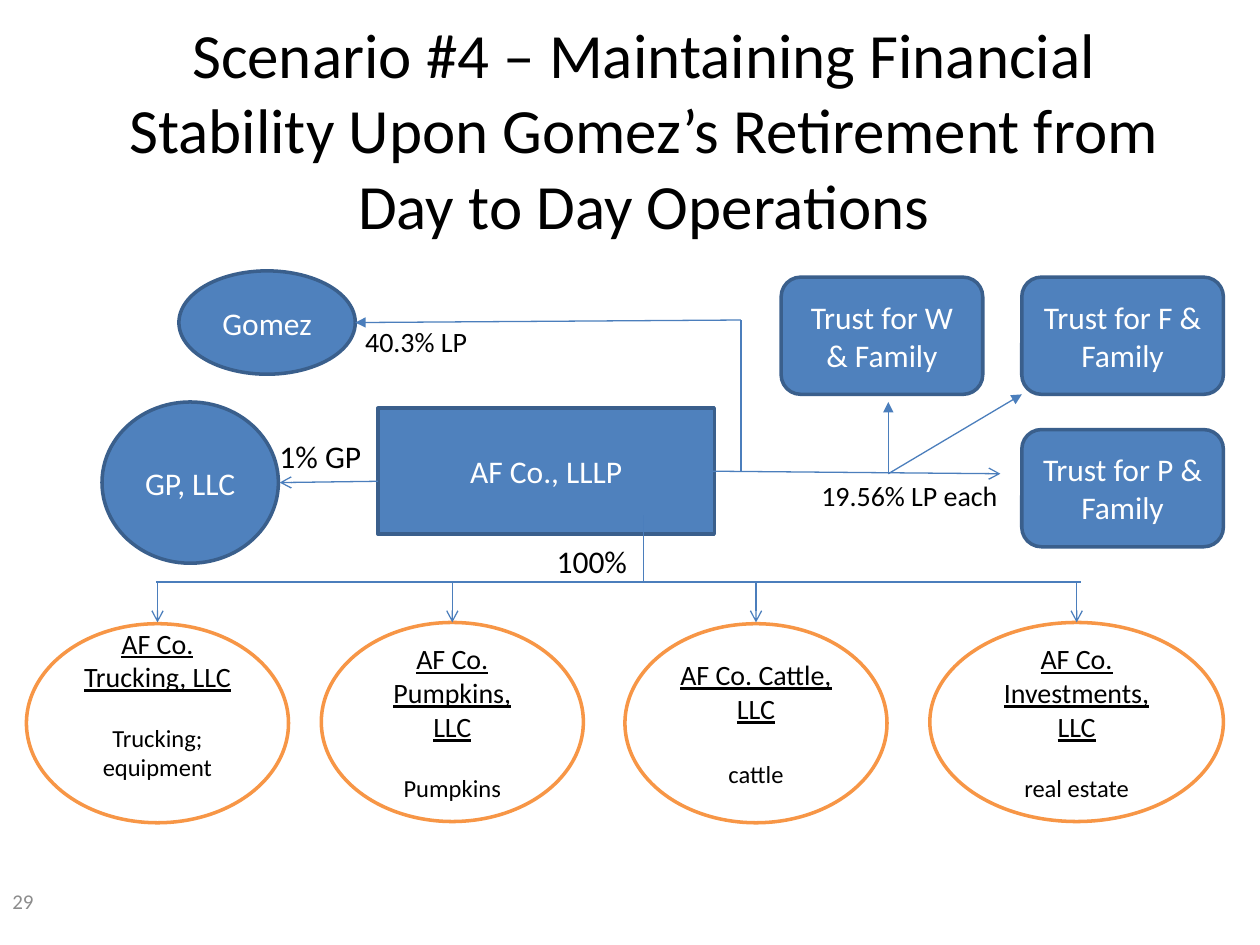
from dataclasses import dataclass

from lxml.etree import SubElement
from pptx import Presentation
from pptx.dml.color import RGBColor
from pptx.enum.shapes import MSO_CONNECTOR, MSO_SHAPE
from pptx.enum.text import MSO_ANCHOR, MSO_AUTO_SIZE, PP_ALIGN
from pptx.oxml.ns import qn
from pptx.util import Inches, Pt


@dataclass(frozen=True)
class Theme:
    """Colours, type sizes and line widths of the slide."""
    font: str = "Calibri"
    ink: str = "000000"
    paper: str = "FFFFFF"
    blue: str = "4F81BD"
    edge: str = "3A5F8C"
    wire: str = "4B7EBC"
    orange: str = "F79646"
    grey: str = "8C8C8C"
    title: int = 36
    body: int = 18
    name: int = 16
    detail: int = 14
    number: int = 12
    outline: float = 2
    thin: float = 0.75


class Diagram:
    """Draws on one slide, with lengths in a grid of 100 columns and 75 rows."""

    def __init__(self, deck, theme):
        self.theme = theme
        self.slide = deck.slides.add_slide(deck.slide_layouts[5])
        self.column = deck.slide_width / 100
        self.row = deck.slide_height / 75

    def place(self, *lengths):
        """Turn alternating columns and rows into slide lengths."""
        units = (self.column, self.row) * 2
        return [round(length * unit) for length, unit in zip(lengths, units)]

    def add_span(self, para, text, size, color, underline=False, align=PP_ALIGN.CENTER):
        """Add one formatted span to a paragraph."""
        para.alignment = align
        span = para.add_run()
        span.text = text
        span.font.color.rgb = RGBColor.from_string(color)
        formats = {"name": self.theme.font, "size": Pt(size), "underline": underline}
        for key, value in formats.items():
            setattr(span.font, key, value)

    def frame(self, shape, anchor=MSO_ANCHOR.MIDDLE):
        """Set up the text frame of a shape and return it."""
        formats = {"word_wrap": True, "auto_size": MSO_AUTO_SIZE.NONE,
                   "vertical_anchor": anchor}
        for key, value in formats.items():
            setattr(shape.text_frame, key, value)
        return shape.text_frame

    def title(self, text, *area):
        """Move and fill the title placeholder."""
        box = self.slide.shapes.title
        for key, value in zip(("left", "top", "width", "height"), self.place(*area)):
            setattr(box, key, value)
        self.add_span(self.frame(box).paragraphs[0], text, self.theme.title, self.theme.ink)

    def shape(self, preset, area, fill, edge):
        """Add a filled preset shape and return its text frame."""
        box = self.slide.shapes.add_shape(preset, *self.place(*area))
        box.shadow.inherit = False
        box.fill.solid()
        box.fill.fore_color.rgb = RGBColor.from_string(fill)
        box.line.color.rgb = RGBColor.from_string(edge)
        box.line.width = Pt(self.theme.outline)
        return self.frame(box)

    def party(self, preset, text, *area):
        """Add a blue owner or partner."""
        frame = self.shape(preset, area, self.theme.blue, self.theme.edge)
        self.add_span(frame.paragraphs[0], text, self.theme.body, self.theme.paper)

    def company(self, name, detail, gap, lift, *area):
        """Add an outlined subsidiary with its name and its assets."""
        frame = self.shape(MSO_SHAPE.OVAL, area, self.theme.paper, self.theme.orange)
        frame.margin_bottom += Pt(lift)
        self.add_span(frame.paragraphs[0], name, self.theme.name, self.theme.ink, True)
        para = frame.add_paragraph()
        para.space_before = Pt(gap)
        self.add_span(para, detail, self.theme.detail, self.theme.ink)

    def label(self, text, area, size, color, anchor=MSO_ANCHOR.TOP):
        """Add a left-aligned text box."""
        box = self.slide.shapes.add_textbox(*self.place(*area))
        para = self.frame(box, anchor).paragraphs[0]
        self.add_span(para, text, size, color, align=PP_ALIGN.LEFT)

    def wire(self, start, end, head=None):
        """Add a thin line, with an arrowhead at its end if one is named."""
        line = self.slide.shapes.add_connector(
            MSO_CONNECTOR.STRAIGHT, *self.place(*start, *end))
        line.line.color.rgb = RGBColor.from_string(self.theme.wire)
        line.line.width = Pt(self.theme.thin)
        properties = line._element.spPr
        if head:
            SubElement(properties.find(qn("a:ln")), qn("a:tailEnd"), type=head)
        SubElement(properties, qn("a:effectLst"))


def main():
    """Build the ownership slide."""
    deck = Presentation()
    deck.slide_width, deck.slide_height = Inches(10), Inches(7.5)
    theme = Theme()
    page = Diagram(deck, theme)
    page.title("Scenario #4 – Maintaining Financial Stability Upon Gomez’s "
               "Retirement from Day to Day Operations", 6.1, 5.8, 90, 8.8)

    page.party(MSO_SHAPE.RECTANGLE, "AF Co., LLLP", 30, 32.4, 26.7, 10)
    page.party(MSO_SHAPE.OVAL, "GP, LLC", 8.1, 31.9, 14, 12.8)
    page.party(MSO_SHAPE.OVAL, "Gomez", 14.2, 21.5, 14, 8.2)
    for family, left, top in (("P", 81.1, 34.1), ("F", 81.1, 22), ("W", 62, 22)):
        page.party(MSO_SHAPE.ROUNDED_RECTANGLE, f"Trust for {family} & Family",
                   left, top, 16, 9.3)

    bus = 46.2
    companies = (
        ("Trucking", "Trucking; equipment", 17, 22, 2.1, 49.5, 20.8),
        ("Pumpkins", "Pumpkins", 17, 0, 25.5, 49.4, 20.8),
        ("Cattle", "cattle", 19.5, 0, 49.6, 49.5, 20.8),
        ("Investments", "real estate", 17, 0, 73.8, 49.4, 23.3),
    )
    for name, detail, gap, lift, left, top, width in companies:
        page.company(f"AF Co. {name}, LLC", detail, gap, lift, left, top, width, 15.8)
        center = left + width / 2
        page.wire((center, bus), (center, 49.4), "arrow")

    wires = (
        ((12.4, bus), (85.8, bus), None),
        ((51.1, 40.9), (51.1, bus), None),
        ((30, 38.2), (22.2, 38.3), "arrow"),
        ((56.6, 37.4), (79.4, 37.6), "arrow"),
        ((70.5, 37.6), (81.1, 31.3), "triangle"),
        ((70.5, 37.6), (70.5, 31.9), "triangle"),
        ((58.8, 25.4), (58.8, 37.4), None),
        ((58.8, 25.4), (28.2, 25.6), "triangle"),
    )
    for start, end, head in wires:
        page.wire(start, end, head)

    labels = (
        ("100%", (43.2, 42.5, 9.6, 4), theme.body),
        ("1% GP", (21.2, 34.2, 10, 4), theme.body),
        ("19.56% LP each", (64.2, 37.5, 16.5, 3.7), theme.name),
        ("40.3% LP", (28, 25.3, 12, 3.7), theme.name),
    )
    for text, area, size in labels:
        page.label(text, area, size, theme.ink)
    page.label("29", (0, 69.5, 23.3, 4), theme.number, theme.grey, MSO_ANCHOR.MIDDLE)
    deck.save("out.pptx")


if __name__ == "__main__":
    main()
